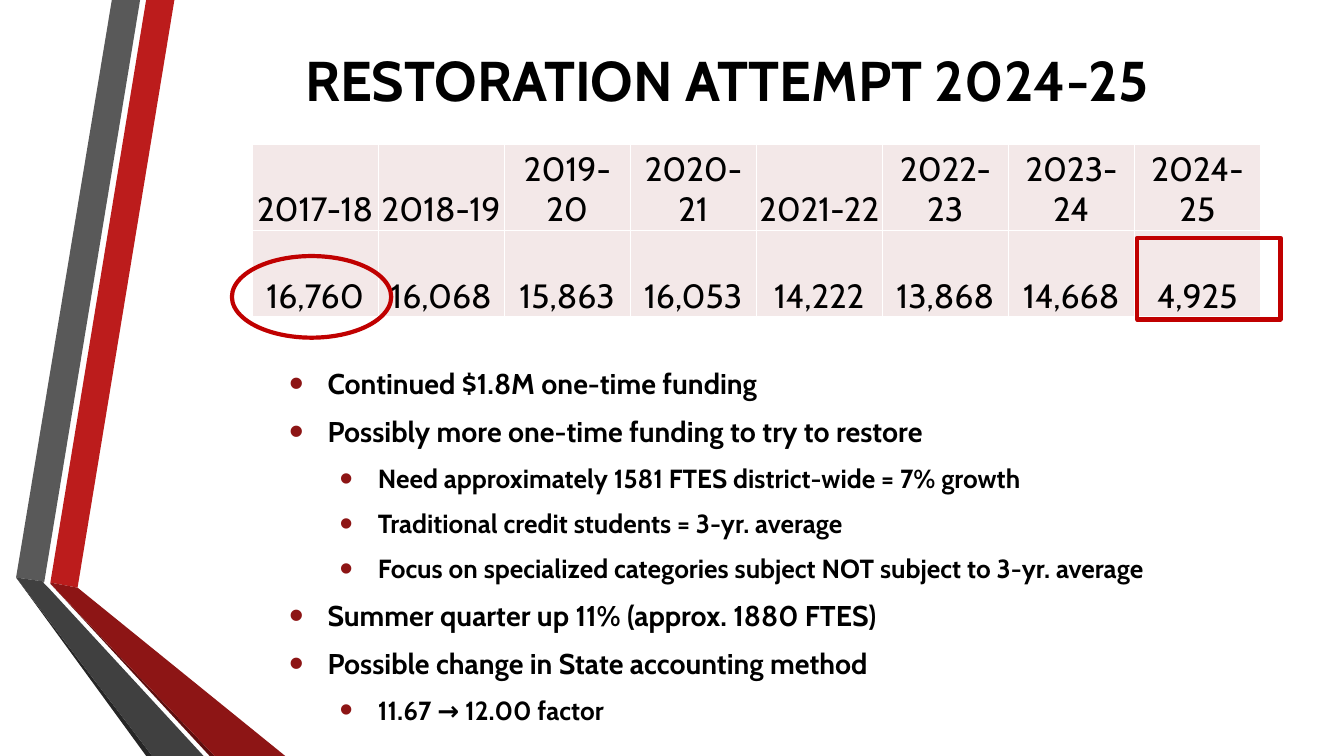
from dataclasses import dataclass

from lxml import etree
from pptx import Presentation
from pptx.dml.color import RGBColor
from pptx.enum.shapes import MSO_SHAPE
from pptx.enum.text import MSO_ANCHOR, PP_ALIGN
from pptx.oxml.ns import qn
from pptx.util import Inches, Pt

CENTER, LEFT = PP_ALIGN.CENTER, PP_ALIGN.LEFT
TOP, BOTTOM = MSO_ANCHOR.TOP, MSO_ANCHOR.BOTTOM
OVAL, RECTANGLE = MSO_SHAPE.OVAL, MSO_SHAPE.RECTANGLE


@dataclass(frozen=True)
class Theme:
    """Colours, font and type sizes of the slide."""
    font: str = "Cabin"
    ink: str = "000000"
    bullet: str = "8D1515"
    cell: str = "F3E8E8"
    grid: str = "FFFFFF"
    marker: str = "C00000"
    title_size: float = 40
    table_size: float = 24
    point_sizes: tuple = (20.4, 18.7)


THEME = Theme()

RIBBONS = [
    ("BC1C1C", [(0.5, 5.78), (0.77, 5.83), (1.73, 0), (1.45, 0)]),
    ("595959", [(1.39, 0), (1.11, 0), (0.16, 5.73), (0.44, 5.77)]),
    ("262626", [(0.16, 5.73), (1.45, 7.5), (1.51, 7.5)]),
    ("5E0E0E", [(0.5, 5.79), (2.08, 7.5), (2.13, 7.5)]),
    ("8D1515", [(0.5, 5.79), (2.13, 7.5), (2.83, 7.5), (0.77, 5.83), (0.5, 5.78)]),
    ("404040", [(2.02, 7.5), (0.48, 5.83), (0.43, 5.78), (0.44, 5.77),
                (0.16, 5.73), (1.51, 7.5)]),
]

FTES_BY_YEAR = {
    "2017-18": "16,760", "2018-19": "16,068", "2019-20": "15,863",
    "2020-21": "16,053", "2021-22": "14,222", "2022-23": "13,868",
    "2023-24": "14,668", "2024-25": "4,925",
}

POINTS = [
    (0, "Continued $1.8M one-time funding"),
    (0, "Possibly more one-time funding to try to restore"),
    (1, "Need approximately 1581 FTES district-wide = 7% growth"),
    (1, "Traditional credit students = 3-yr. average"),
    (1, "Focus on specialized categories subject NOT subject to 3-yr. average"),
    (0, "Summer quarter up 11% (approx. 1880 FTES)"),
    (0, "Possible change in State accounting method"),
    (1, "11.67 → 12.00 factor"),
]


def write(paragraph, text, size, bold=False, align=LEFT):
    """Put one formatted run into a paragraph."""
    paragraph.alignment = align
    run = paragraph.add_run()
    run.text = text
    for key, value in {"name": THEME.font, "size": Pt(size), "bold": bold}.items():
        setattr(run.font, key, value)
    run.font.color.rgb = RGBColor.from_string(THEME.ink)


def add_frame(slide, box, anchor):
    """Add a wrapping text box and return its text frame."""
    frame = slide.shapes.add_textbox(*map(Inches, box)).text_frame
    frame.word_wrap = True
    frame.vertical_anchor = anchor
    return frame


def add_ribbons(slide, box):
    """Draw the folded ribbons from the top left of the box."""
    left, top = box[:2]
    for colour, corners in RIBBONS:
        outline = [(Inches(left + x), Inches(top + y)) for x, y in corners]
        builder = slide.shapes.build_freeform(*outline[0])
        builder.add_line_segments(outline[1:], close=True)
        ribbon = builder.convert_to_shape()
        ribbon.shadow.inherit = False
        ribbon.fill.solid()
        ribbon.fill.fore_color.rgb = RGBColor.from_string(colour)
        ribbon.line.fill.background()


def add_title(slide, box):
    """Write the centred heading."""
    heading = add_frame(slide, box, BOTTOM).paragraphs[0]
    write(heading, "RESTORATION ATTEMPT 2024-25", THEME.title_size, True, CENTER)


def add_bullet(paragraph, level):
    """Give a paragraph its hanging indent and coloured bullet."""
    properties = paragraph._p.get_or_add_pPr()
    properties.set("marL", str(Inches(0.87 + 0.5 * level)))
    properties.set("indent", str(Inches(-0.38)))
    colour = etree.SubElement(properties, qn("a:buClr"))
    etree.SubElement(colour, qn("a:srgbClr"), val=THEME.bullet)
    etree.SubElement(properties, qn("a:buSzPct"), val="145000")
    etree.SubElement(properties, qn("a:buFont"), typeface="Arial")
    etree.SubElement(properties, qn("a:buChar"), char="•")


def add_points(slide, box):
    """Write the two-level bullet list."""
    frame = add_frame(slide, box, TOP)
    for index, (level, text) in enumerate(POINTS):
        point = frame.add_paragraph() if index else frame.paragraphs[0]
        size = THEME.point_sizes[level]
        write(point, text, size, True)
        point.level = level
        point.space_before = Pt(round(0.2 * size, 1) if index else 0)
        point.space_after = Pt(6)
        add_bullet(point, level)


def add_borders(cell):
    """Outline a cell on all four sides."""
    properties = cell._tc.get_or_add_tcPr()
    for index, side in enumerate(("lnL", "lnR", "lnT", "lnB")):
        line = etree.Element(qn(f"a:{side}"), w=str(Pt(1)))
        fill = etree.SubElement(line, qn("a:solidFill"))
        etree.SubElement(fill, qn("a:srgbClr"), val=THEME.grid)
        properties.insert(index, line)


def add_marker(slide, kind, box):
    """Draw an unfilled highlight outline."""
    marker = slide.shapes.add_shape(kind, *map(Inches, box))
    marker.shadow.inherit = False
    marker.fill.background()
    marker.line.color.rgb = RGBColor.from_string(THEME.marker)
    marker.line.width = Pt(3)


def add_ftes_table(slide, box):
    """Build the table of years and mark its first and last values."""
    left, top, width, height = box
    rows = [list(FTES_BY_YEAR), list(FTES_BY_YEAR.values())]
    table = slide.shapes.add_table(2, len(FTES_BY_YEAR), *map(Inches, box)).table
    cell_format = {
        "vertical_anchor": BOTTOM, "margin_left": Inches(0.01),
        "margin_right": Inches(0.01), "margin_top": Inches(0.01), "margin_bottom": 0,
    }
    for row, texts in enumerate(rows):
        for column, text in enumerate(texts):
            cell = table.cell(row, column)
            for key, value in cell_format.items():
                setattr(cell, key, value)
            cell.fill.solid()
            cell.fill.fore_color.rgb = RGBColor.from_string(THEME.cell)
            add_borders(cell)
            write(cell.text_frame.paragraphs[0], text, THEME.table_size, align=CENTER)
    add_marker(slide, OVAL, (left - 0.2, top + 1.11, 1.58, 0.81))
    add_marker(slide, RECTANGLE, (left + width - 1.22, top + 0.93, 1.42, 0.81))


def main():
    """Assemble and save the slide."""
    deck = Presentation()
    deck.slide_width, deck.slide_height = Inches(13.33), Inches(7.5)
    slide = deck.slides.add_slide(deck.slide_layouts[6])
    add_ribbons(slide, (0, 0, 2.83, 7.5))
    add_title(slide, (2.33, 0.36, 9.76, 0.81))
    add_points(slide, (2.28, 3.58, 10.75, 3.42))
    add_ftes_table(slide, (2.5, 1.43, 10, 1.71))
    deck.save("out.pptx")


if __name__ == "__main__":
    main()
